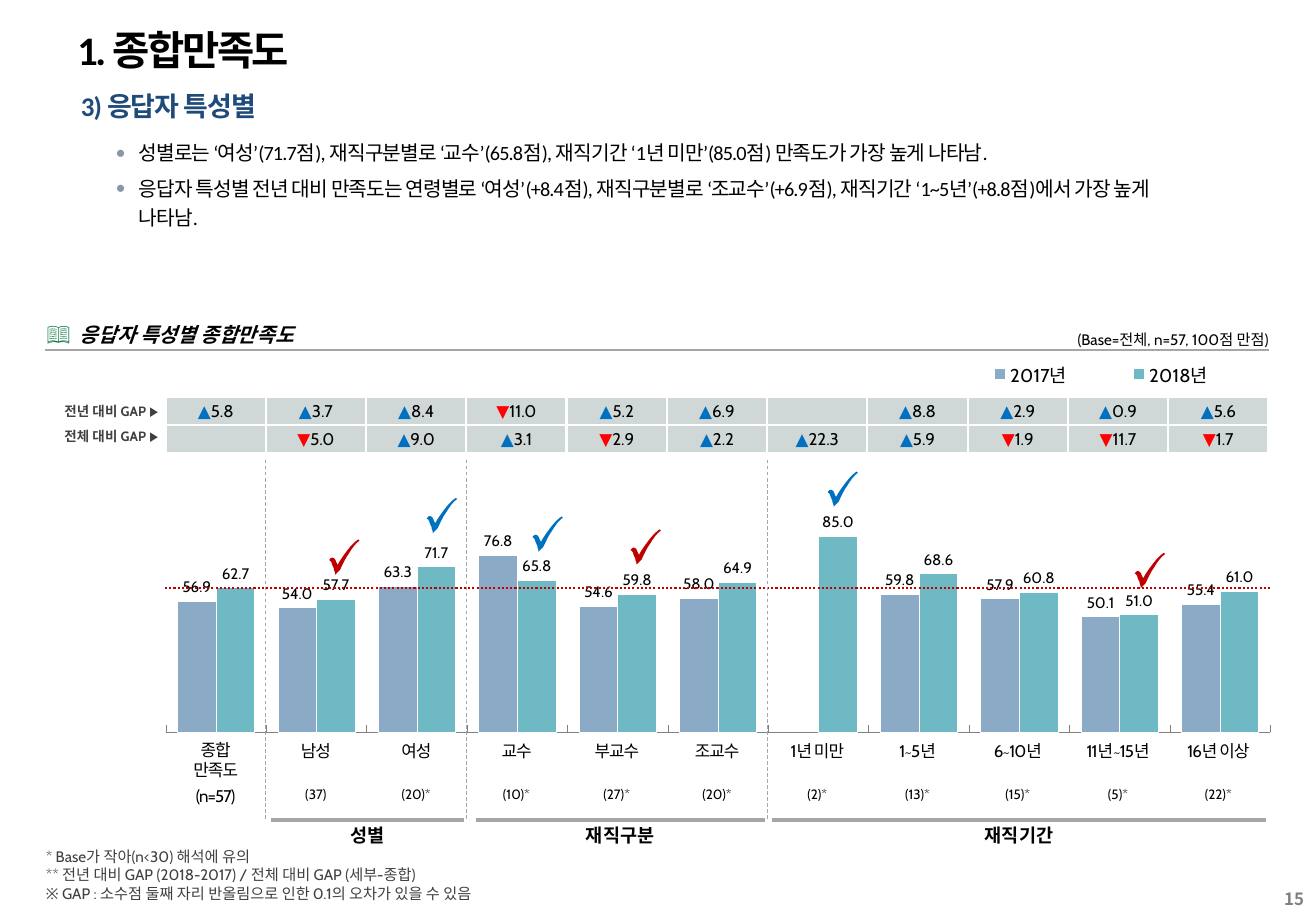
from typing import NamedTuple

from lxml.etree import SubElement
from pptx import Presentation
from pptx.chart.data import CategoryChartData
from pptx.dml.color import RGBColor
from pptx.enum.chart import XL_CHART_TYPE, XL_LABEL_POSITION, XL_LEGEND_POSITION, XL_TICK_LABEL_POSITION, XL_TICK_MARK
from pptx.enum.dml import MSO_LINE
from pptx.enum.shapes import MSO_CONNECTOR, MSO_SHAPE
from pptx.enum.text import MSO_ANCHOR, PP_ALIGN
from pptx.oxml import parse_xml
from pptx.oxml.ns import nsdecls, qn
from pptx.util import Cm, Pt

BLACK, GRAY, DARK, WHITE = "000000", "A6A6A6", "404040", "FFFFFF"
BLUE, RED, CRIMSON = "0070C0", "FF0000", "C00000"
PLAIN_TABLE = "{2D5ABB26-0587-4C30-8999-92F81FD0307C}"

CATEGORIES = ["종합\n만족도", "남성", "여성", "교수", "부교수", "조교수", "1년 미만", "1~5년", "6~10년", "11년~15년", "16년 이상"]
BASES = ["(n=57)", "(37)", "(20)*", "(10)*", "(27)*", "(20)*", "(2)*", "(13)*", "(15)*", "(5)*", "(22)*"]
GAPS = [
    ["▲5.8", "▲3.7", "▲8.4", "▼11.0", "▲5.2", "▲6.9", "", "▲8.8", "▲2.9", "▲0.9", "▲5.6"],
    ["", "▼5.0", "▲9.0", "▲3.1", "▼2.9", "▲2.2", "▲22.3", "▲5.9", "▼1.9", "▼11.7", "▼1.7"],
]
SCORES = [
    ("2017년", "8AAAC6", [56.9, 54, 63.3, 76.8, 54.6, 58, None, 59.8, 57.9, 50.1, 55.4]),
    ("2018년", "6FB9C5", [62.7, 57.7, 71.7, 65.8, 59.8, 64.9, 85, 68.6, 60.8, 51, 61]),
]
GROUPS = [("성별", 1, 2, 0.1), ("재직구분", 3, 3, 0.2), ("재직기간", 6, 5, 0.1)]
CHECKS = [(6.88, 11.28, CRIMSON), (8.92, 10.41, BLUE), (13.18, 11.07, CRIMSON),
          (23.72, 11.56, CRIMSON), (11.13, 10.8, BLUE), (17.3, 9.86, BLUE)]
CHECK_START = (24, 0)
CHECK_CURVES = [
    [(25, 1), (25, 1), (25, 1)], [(22, 3), (19, 7), (16, 12)], [(13, 16), (11, 21), (9, 25)],
    [(8, 26), (8, 26), (8, 26)], [(7, 27), (6, 28), (5, 29)], [(5, 28), (5, 27), (4, 25)],
    [(4, 24), (4, 24), (4, 24)], [(3, 22), (2, 20), (2, 19)], [(1, 18), (1, 17), (0, 17)],
    [(1, 15), (2, 15), (3, 15)], [(4, 15), (5, 16), (6, 19)], [(7, 21), (7, 21), (7, 21)],
    [(9, 17), (12, 13), (15, 9)], [(18, 5), (21, 2), (24, 0)],
]


class Box(NamedTuple):
    left: float
    top: float
    width: float
    height: float

    def lengths(self):
        return [Cm(value) for value in self]


def color_of(code):
    return RGBColor.from_string(code)


def write(para, text, size=10, color=BLACK, bold=False, italic=False, font="Cabin", spacing=0,
          align=PP_ALIGN.LEFT, line=None, after=None, indent=0, bullet=None):
    para.alignment = align
    if line:
        para.line_spacing = line
    if after:
        para.space_after = Pt(after)
    if indent:
        properties = para._p.get_or_add_pPr()
        properties.set("marL", str(Cm(indent)))
        properties.set("indent", str(-Cm(indent)))
    if bullet:
        symbol, tint, percent = bullet
        SubElement(SubElement(properties, qn("a:buClr")), qn("a:srgbClr"), val=tint)
        SubElement(properties, qn("a:buSzPct"), val=str(percent * 1000))
        SubElement(properties, qn("a:buFont"), typeface=font)
        SubElement(properties, qn("a:buChar"), char=symbol)
    if not text:
        para._p.get_or_add_endParaRPr().set("sz", str(size * 100))
        return
    for number, part in enumerate(text.split("\v")):
        if number:
            para.add_line_break()
        span = para.add_run()
        span.text = part
        span.font.size, span.font.bold, span.font.italic = Pt(size), bold, italic
        span.font.color.rgb = color_of(color)
        span.font.name = font
        span._r.rPr.set("spc", str(int(spacing * 100)))
        SubElement(span._r.rPr, qn("a:ea"), typeface=font)


def fill_frame(frame, lines, anchor=MSO_ANCHOR.TOP, wrap=False, insets=(0, 0, 0, 0), **style):
    frame.word_wrap, frame.vertical_anchor = wrap, anchor
    frame.margin_left, frame.margin_top, frame.margin_right, frame.margin_bottom = map(Cm, insets)
    for number, text in enumerate(lines):
        write(frame.add_paragraph() if number else frame.paragraphs[0], text, **style)


def add_text(page, box, lines, **style):
    fill_frame(page.shapes.add_textbox(*box.lengths()).text_frame, lines, **style)


def add_line(page, start, end, color, weight, dash=None):
    line = page.shapes.add_connector(MSO_CONNECTOR.STRAIGHT, *map(Cm, start + end))
    line.line.color.rgb, line.line.width = color_of(color), Pt(weight)
    if dash:
        line.line.dash_style = dash
    SubElement(line._element.spPr, qn("a:effectLst"))


def add_grid(page, box, rows, columns):
    table = page.shapes.add_table(rows, columns, *box.lengths()).table
    table.first_row = table.horz_banding = False
    table._tbl.tblPr.find(qn("a:tableStyleId")).text = PLAIN_TABLE
    for cell in table.iter_cells():
        cell.fill.background()
        set_insets(cell, 0.03, 0.03, 0.03, 0)
    return table


def set_insets(cell, *insets):
    cell.margin_left, cell.margin_top, cell.margin_right, cell.margin_bottom = map(Cm, insets)


def set_borders(cell, sides, color, weight):
    for number, side in enumerate(sides):
        cell._tc.get_or_add_tcPr().insert(number, parse_xml(
            f'<a:ln{side} {nsdecls("a")} w="{Pt(weight)}"><a:solidFill><a:srgbClr val="{color}"/></a:solidFill></a:ln{side}>'))


def add_header(page, box):
    title = page.shapes.title
    title.left, title.top, title.width, title.height = Box(box.left, box.top, 9.27, 1.27).lengths()
    padding = (0.25, 0.13, 0.25, 0.13)
    fill_frame(title.text_frame, ["1. 종합만족도"], MSO_ANCHOR.MIDDLE, insets=padding,
               size=24, bold=True, font="Calibri", spacing=-1.5)
    add_text(page, Box(box.left + 0.07, box.top + 1.24, 19.25, 0.99), ["3) 응답자 특성별"], anchor=MSO_ANCHOR.MIDDLE,
             insets=padding, size=16, color="1F4B7B", bold=True, font="Calibri", spacing=-0.5, line=1.2, after=1.5)
    add_text(page, Box(box.left + 0.8, box.top + 2.3, box.width - 0.8, 0.79), [
        "성별로는 ‘여성’(71.7점), 재직구분별로 ‘교수’(65.8점), 재직기간 ‘1년 미만’(85.0점) 만족도가 가장 높게 나타남.",
        "응답자 특성별 전년 대비 만족도는 연령별로 ‘여성’(+8.4점), 재직구분별로 ‘조교수’(+6.9점), "
        "재직기간 ‘1~5년’(+8.8점)에서 가장 높게 \v나타남."],
        wrap=True, insets=padding, size=12, font="Calibri", spacing=-0.5, line=1.2, after=4,
        indent=0.48, bullet=("•", "8B96AB", 100))


def add_section_heading(page, box):
    bottom = box.top + box.height
    add_text(page, Box(box.left + box.width - 4.37, bottom - 0.41, 4.37, 0.38), ["(Base=전체, n=57, 100점 만점)"],
             anchor=MSO_ANCHOR.BOTTOM, size=9, align=PP_ALIGN.RIGHT)
    add_line(page, (box.left, bottom), (box.left + box.width, bottom), GRAY, 1.5)
    add_text(page, Box(box.left + 0.04, box.top, 5.64, 0.51), ["응답자 특성별 종합만족도"], anchor=MSO_ANCHOR.MIDDLE,
             size=12, bold=True, italic=True, indent=0.69, bullet=("📖", "00713B", 110))


def set_layout(parent, position, left, top, width, height, inner=False):
    target = '<c:layoutTarget val="inner"/>' if inner else ""
    values = "".join(f'<c:{name} val="{value}"/>' for name, value in [
        ("xMode", "edge"), ("yMode", "edge"), ("x", left), ("y", top), ("w", width), ("h", height)])
    for old in parent.findall(qn("c:layout")):
        parent.remove(old)
    parent.insert(position, parse_xml(f'<c:layout {nsdecls("c")}><c:manualLayout>{target}{values}</c:manualLayout></c:layout>'))


def add_score_chart(page, box):
    data = CategoryChartData(number_format="###0.0")
    data.categories = [str(number + 1) for number in range(len(CATEGORIES))]
    for name, _, values in SCORES:
        data.add_series(name, values)
    chart = page.shapes.add_chart(XL_CHART_TYPE.COLUMN_CLUSTERED, *box.lengths(), data).chart
    chart.has_title = False
    chart.font.size, chart.font.name, chart.font.color.rgb = Pt(11), "Cabin", color_of(BLACK)
    chart.has_legend = True
    chart.legend.position, chart.legend.include_in_layout = XL_LEGEND_POSITION.TOP, False
    set_layout(chart.legend._element, 1, 0.72, 0.02, 0.27, 0.09)
    set_layout(chart._chartSpace.chart.plotArea, 0, 2.53 / box.width, 2.23 / box.height,
               23.09 / box.width, 5.8 / box.height, inner=True)
    for axis, mark in [(chart.category_axis, XL_TICK_MARK.INSIDE), (chart.value_axis, XL_TICK_MARK.NONE)]:
        axis.tick_label_position = XL_TICK_LABEL_POSITION.NONE
        axis.major_tick_mark, axis.minor_tick_mark = mark, XL_TICK_MARK.NONE
        axis.has_major_gridlines = False
    chart.category_axis.format.line.color.rgb = color_of("808080")
    chart.category_axis.format.line.width = Pt(0.5)
    chart.value_axis.minimum_scale, chart.value_axis.maximum_scale = 0, 120
    chart.value_axis.format.line.fill.background()
    plot = chart.plots[0]
    plot.gap_width, plot.overlap, plot.vary_by_categories = 60, 0, False
    for series, (_, color, _) in zip(plot.series, SCORES):
        series.format.fill.solid()
        series.format.fill.fore_color.rgb = color_of(color)
        series.format.line.color.rgb, series.format.line.width = color_of(WHITE), Pt(0.5)
        labels = series.data_labels
        labels.show_value, labels.position = True, XL_LABEL_POSITION.OUTSIDE_END
        labels.number_format, labels.number_format_is_linked = "###0.0", False
        labels.font.size = Pt(9)


def add_category_table(page, box):
    table = add_grid(page, box, 2, len(CATEGORIES))
    set_insets(table.cell(0, 0), 0, 0, 0, 0.1)
    for column, (name, base) in enumerate(zip(CATEGORIES, BASES)):
        for row, text in enumerate([name, base]):
            small = row == 1 and column > 0
            frame = table.cell(row, column).text_frame
            for number, line in enumerate(text.split("\n")):
                write(frame.add_paragraph() if number else frame.paragraphs[0], line, size=8 if small else 10,
                      spacing=0 if small else -0.5, align=PP_ALIGN.CENTER)


def add_gap_table(page, box):
    table = add_grid(page, box, 2, len(CATEGORIES))
    for row, gaps in enumerate(GAPS):
        for column, gap in enumerate(gaps):
            cell = table.cell(row, column)
            cell.fill.solid()
            cell.fill.fore_color.rgb = color_of("D0D7D7")
            cell.vertical_anchor = MSO_ANCHOR.MIDDLE
            set_borders(cell, "LRTB", WHITE, 1.5)
            para = cell.text_frame.paragraphs[0]
            write(para, gap[:1], color=BLUE if gap[:1] == "▲" else RED, align=PP_ALIGN.CENTER)
            write(para, gap[1:], align=PP_ALIGN.CENTER)
    for row, label in enumerate(["전년 대비 GAP ▶", "전체 대비 GAP ▶"]):
        place = Box(box.left - 2.51, box.top + 0.05 + row * 0.53, 2.36, 0.48)
        tag = page.shapes.add_shape(MSO_SHAPE.RECTANGLE, *place.lengths())
        tag.shadow.inherit = False
        tag.fill.solid()
        tag.fill.fore_color.rgb = color_of(WHITE)
        tag.line.fill.background()
        fill_frame(tag.text_frame, [label], MSO_ANCHOR.MIDDLE, size=8, color=DARK, bold=True, align=PP_ALIGN.RIGHT)


def add_groups(page, box):
    pitch = box.width / len(CATEGORIES)
    bottom = box.top + box.height
    for label, first, count, inset in GROUPS:
        edge = box.left + first * pitch
        cell = add_grid(page, Box(edge + inset, bottom, count * pitch - inset - 0.05, 0.66), 1, 1).cell(0, 0)
        set_insets(cell, 0, 0.1, 0, 0)
        set_borders(cell, "T", GRAY, 2.25)
        write(cell.text_frame.paragraphs[0], label, size=11, bold=True, align=PP_ALIGN.CENTER)
        add_line(page, (edge, box.top), (edge, bottom), GRAY, 0.5, MSO_LINE.DASH)


def add_check(page, left, top, color):
    builder = page.shapes.build_freeform(*CHECK_START, scale=Cm(0.0254))
    builder.add_line_segments([curve[-1] for curve in CHECK_CURVES], close=True)
    check = builder.convert_to_shape(Cm(left), Cm(top))
    for segment, curve in zip(list(check._element.iter(qn("a:lnTo"))), CHECK_CURVES):
        if curve[0] != curve[-1]:
            segment.tag = qn("a:cubicBezTo")
            segment.remove(segment[0])
            for x, y in curve:
                SubElement(segment, qn("a:pt"), x=str(x), y=str(y))
    check.shadow.inherit = False
    check.fill.solid()
    check.fill.fore_color.rgb = color_of(color)
    check.line.fill.background()


def add_footer(page, box):
    add_text(page, Box(box.left, box.top, 9.96, box.height), [
        "* Base가 작아(n<30) 해석에 유의",
        "** 전년 대비 GAP (2018-2017) / 전체 대비 GAP (세부-종합)",
        "※ GAP : 소수점 둘째 자리 반올림으로 인한 0.1의 오차가 있을 수 있음"], size=9, color=DARK, indent=0.81)
    add_text(page, Box(box.left + box.width - 1.22, box.top + 0.8, 1.22, 0.53), ["15"], anchor=MSO_ANCHOR.MIDDLE,
             insets=(0.25, 0, 0.25, 0), size=10, color="808080", bold=True, font="Noto Sans CJK KR", align=PP_ALIGN.RIGHT)


def main():
    deck = Presentation()
    deck.slide_width, deck.slide_height = Cm(27.51), Cm(19.05)
    page = deck.slides.add_slide(deck.slide_layouts[5])
    columns = Box(3.46, 9.62, 23.06, 7.53)
    add_header(page, Box(1.37, 0.4, 25.4, 3.1))
    add_section_heading(page, Box(0.94, 6.73, 25.58, 0.59))
    add_score_chart(page, Box(0.94, 7.29, 25.83, 8.18))
    add_category_table(page, columns._replace(top=15.47, height=1.2))
    add_gap_table(page, columns._replace(top=8.3, height=1.17))
    add_line(page, (3.45, 12.29), (26.54, 12.29), CRIMSON, 1.25, MSO_LINE.ROUND_DOT)
    add_groups(page, columns)
    for left, top, color in CHECKS:
        add_check(page, left, top, color)
    add_footer(page, Box(0.96, 17.72, 26.55, 1.14))
    deck.save("out.pptx")


if __name__ == "__main__":
    main()
